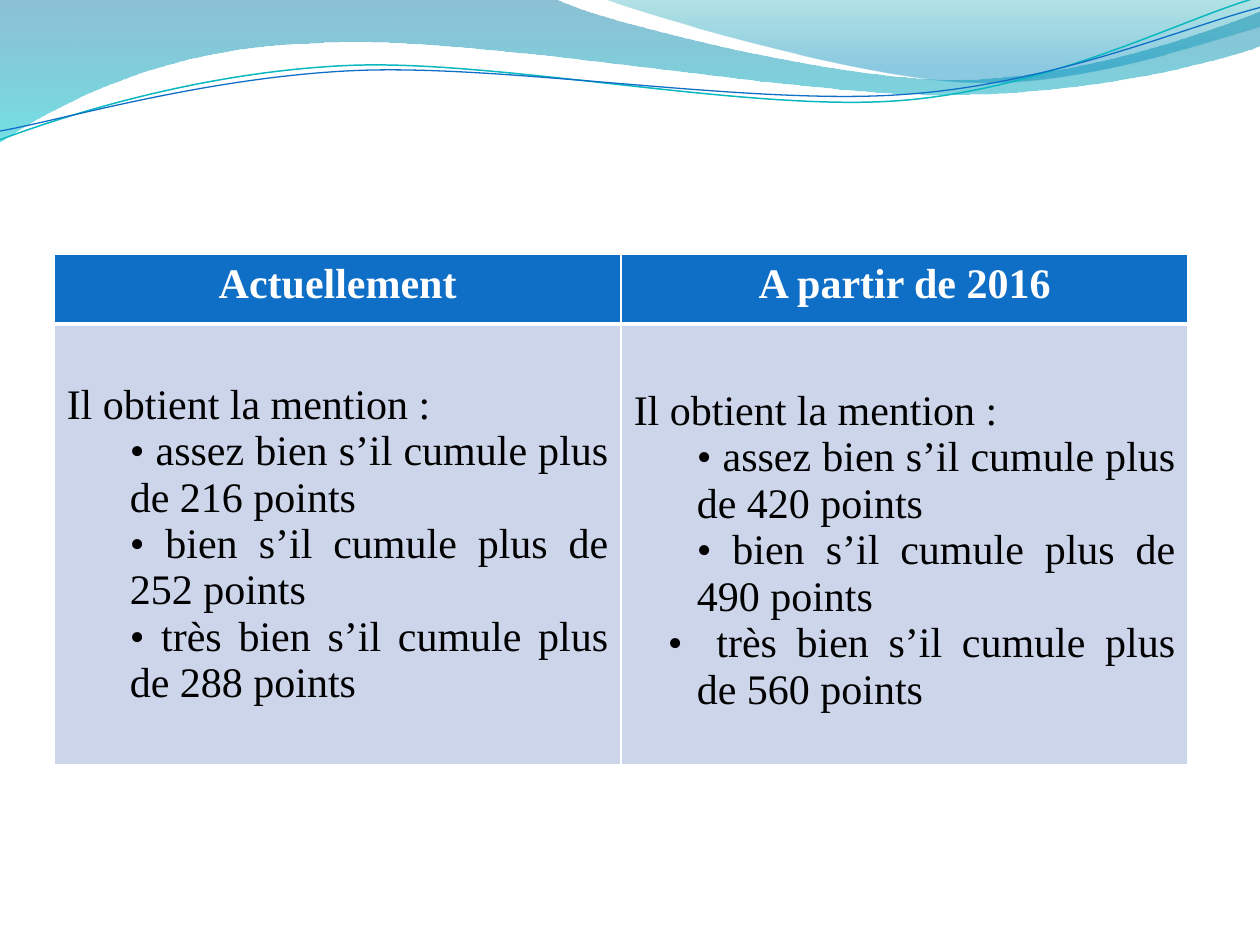
from lxml.etree import SubElement
from pptx import Presentation
from pptx.dml.color import RGBColor as RGB
from pptx.enum.text import PP_ALIGN as Align
from pptx.oxml.ns import qn
from pptx.util import Inches, Pt

COLORS = {
    "header": "0F6FC6", "body": "CCD5EA", "white": "FFFFFF", "black": "000000",
    "deep": "0074A1", "aqua": "00C6CF", "teal": "00A1A9", "blue": "008BBF",
    "teal_line": "0AB8BF", "blue_line": "0F6FC6",
}
FONT = "Times New Roman"

BANDS = [
    ([(0, 0), (4.4, -0.01), (4.76, 0.17, 6.64, 0.63, 7.58, 0.63),
      (8.53, 0.63, 9.58, 0.26, 10, 0.09), (10.01, 0.36),
      (9.83, 0.44, 8.7, 0.76, 7.46, 0.75), (6.22, 0.75, 3.82, 0.28, 2.57, 0.34),
      (1.29, 0.36, 0.46, 0.83, -0.01, 1.13)],
     [(0, "deep", 45), (1, "aqua", 55)]),
    ([(4.79, -0.01), (5.09, 0.11, 6.82, 0.62, 7.69, 0.65),
      (8.56, 0.69, 9.61, 0.32, 10, 0.21), (10, 0)],
     [(0, "teal", 30), (0.8, "blue", 45)]),
]
STRANDS = [
    ([(0, 1.11), (0.48, 0.93, 1.58, 0.57, 2.77, 0.52),
      (3.95, 0.47, 5.93, 0.89, 7.13, 0.8), (8.33, 0.71, 9.38, 0.15, 9.98, -0.02)],
     "teal_line", 0.85),
    ([(0, 1.04), (0.47, 0.96, 1.64, 0.61, 2.83, 0.56),
      (4.03, 0.51, 5.97, 0.84, 7.17, 0.75), (8.36, 0.67, 9.41, 0.21, 10, 0.06)],
     "blue_line", 0.75),
]
INTRO = "Il obtient la mention :"
REGIMES = [
    ("Actuellement", 0.46, [
        "• assez bien s’il cumule plus de 216 points",
        "• bien s’il cumule plus de 252 points",
        "• très bien s’il cumule plus de 288 points"], ""),
    ("A partir de 2016", 0.51, [
        "• assez bien s’il cumule plus de 420 points",
        "• bien s’il cumule plus de 490 points"],
        " très bien s’il cumule plus de 560 points "),
]


def color(name):
    """Return the named colour."""
    return RGB.from_string(COLORS[name])


def add_outline(slide, left, top, segments, close):
    """Draw straight and cubic segments measured from left and top."""
    anchors = [(left + Inches(s[-2]), top + Inches(s[-1])) for s in segments]
    builder = slide.shapes.build_freeform(*anchors[0])
    builder.add_line_segments(anchors[1:], close=close)
    outline = builder.convert_to_shape()
    outline.shadow.inherit = False
    edges = list(outline._element.iter(qn("a:lnTo")))
    for edge, segment in zip(edges, segments[1:]):
        if len(segment) == 6:
            edge.tag = qn("a:cubicBezTo")
            for index in (0, 2):
                x = left + Inches(segment[index]) - outline.left
                y = top + Inches(segment[index + 1]) - outline.top
                control = SubElement(edge, qn("a:pt"), x=str(x), y=str(y))
                edge.insert(index // 2, control)
    return outline


def add_waves(slide, left, top):
    """Draw the translucent bands and the thin strands over them."""
    for segments, stops in BANDS:
        band = add_outline(slide, left, top, segments, True)
        band.line.fill.background()
        band.fill.gradient()
        band.fill.gradient_angle = 270
        for stop, (position, name, _) in zip(band.fill.gradient_stops, stops):
            stop.position = position
            stop.color.rgb = color(name)
        tints = band._element.spPr.iter(qn("a:srgbClr"))
        for tint, (_, _, opacity) in zip(tints, stops):
            SubElement(tint, qn("a:alpha"), val=str(opacity * 1000))
    for segments, name, width in STRANDS:
        strand = add_outline(slide, left, top, segments, False)
        strand.fill.background()
        strand.line.color.rgb = color(name)
        strand.line.width = Pt(width)


def style_cell(cell, fill, top_width, bottom_width):
    """Fill a cell and give it white borders."""
    properties = cell._tc.get_or_add_tcPr()
    for side, width in zip("LRTB", (1, 1, top_width, bottom_width)):
        border = SubElement(properties, qn(f"a:ln{side}"), w=str(Pt(width)))
        solid = SubElement(border, qn("a:solidFill"))
        SubElement(solid, qn("a:srgbClr"), val=COLORS["white"])
    cell.fill.solid()
    cell.fill.fore_color.rgb = color(fill)


def write(paragraph, text, align, ink, bold=False):
    """Write one run in a paragraph."""
    paragraph.alignment = align
    run = paragraph.add_run()
    run.text = text
    run.font.name = FONT
    run.font.size = Pt(24)
    run.font.bold = bold
    run.font.color.rgb = color(ink)


def add_mention(frame, text, bulleted=False):
    """Add an indented mention, with a hanging bullet if asked."""
    paragraph = frame.add_paragraph()
    paragraph.level = 1
    write(paragraph, text, Align.JUSTIFY, "black")
    properties = paragraph._p.get_or_add_pPr()
    properties.set("marL", str(Inches(0.5)))
    properties.set("indent", str(Inches(-0.23 if bulleted else 0)))
    if bulleted:
        SubElement(properties, qn("a:buFont"), typeface=FONT)
        SubElement(properties, qn("a:buChar"), char="•")


def add_comparison(slide, left, top, width, height):
    """Add the table comparing the two grading regimes."""
    table = slide.shapes.add_table(2, len(REGIMES), left, top, width, height).table
    table.rows[0].height = Inches(0.55)
    table.rows[1].height = height - Inches(0.55)
    for column, (title, top_margin, mentions, last_mention) in enumerate(REGIMES):
        header, body = table.cell(0, column), table.cell(1, column)
        style_cell(header, "header", 1, 3)
        style_cell(body, "body", 3, 1)
        write(header.text_frame.paragraphs[0], title, Align.CENTER, "white", True)
        body.margin_top = Inches(top_margin)
        write(body.text_frame.paragraphs[0], INTRO, Align.JUSTIFY, "black")
        for mention in mentions:
            add_mention(body.text_frame, mention)
        if last_mention:
            add_mention(body.text_frame, last_mention, True)


def main():
    """Build the slide and save it."""
    deck = Presentation()
    deck.slide_width, deck.slide_height = Inches(10), Inches(7.5)
    slide = deck.slides.add_slide(deck.slide_layouts[6])
    add_waves(slide, Inches(0), Inches(0))
    add_comparison(slide, Inches(0.43), Inches(2.02), Inches(9), Inches(4.05))
    deck.save("out.pptx")


if __name__ == "__main__":
    main()
